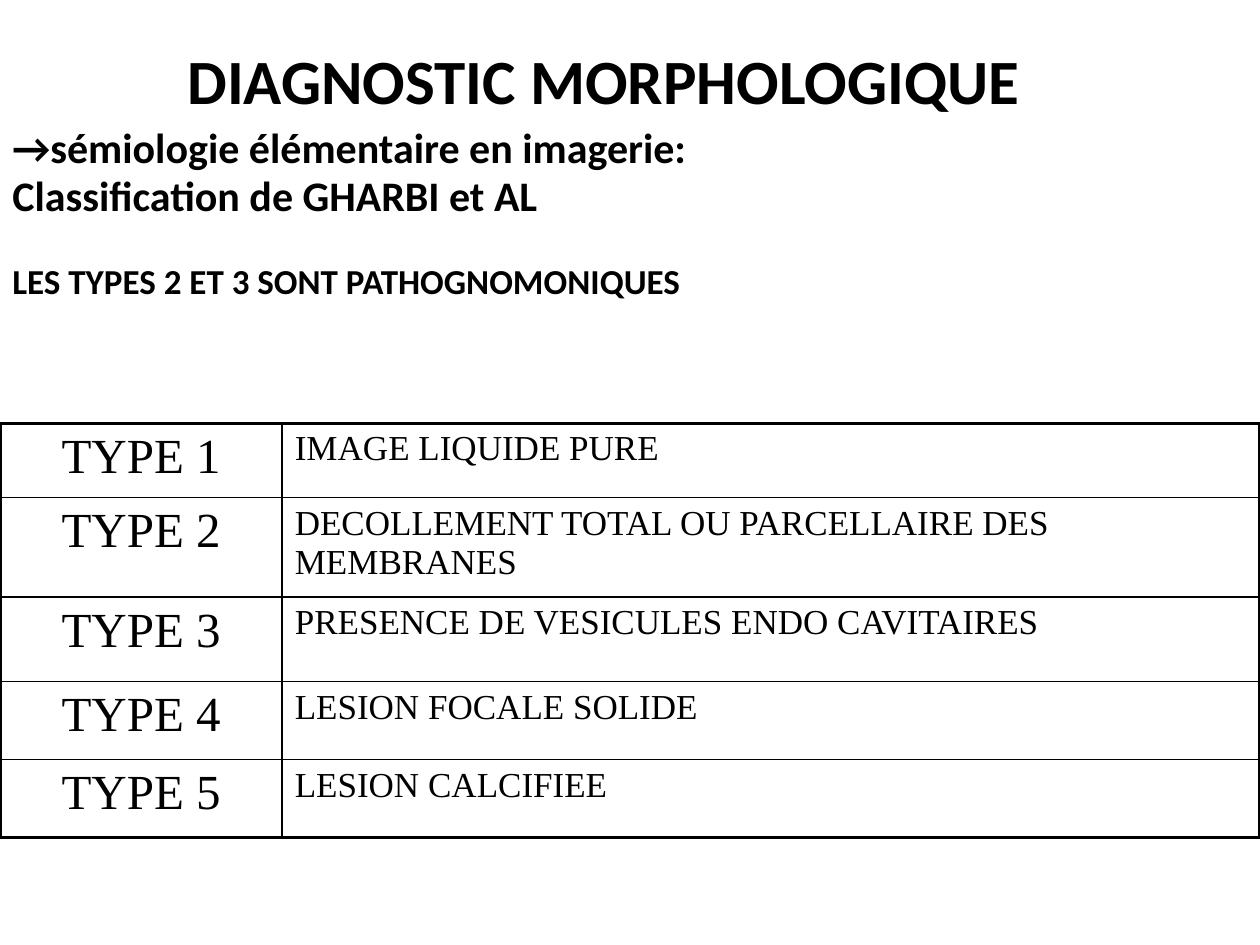
from dataclasses import dataclass

from lxml.etree import SubElement
from pptx import Presentation
from pptx.dml.color import RGBColor
from pptx.enum.text import PP_ALIGN
from pptx.oxml.ns import qn
from pptx.util import Inches, Pt

BLACK = RGBColor(0, 0, 0)
THICK, THIN = 2.25, 1


@dataclass
class Line:
    text: str
    size: int
    gap: float = 0


@dataclass
class Grade:
    name: str
    finding: str
    height: float


TITLE = Line("DIAGNOSTIC MORPHOLOGIQUE", 36)
INTRO = [
    Line("→sémiologie élémentaire en imagerie:", 24, 4.8),
    Line("Classification de GHARBI et AL", 24, 4.8),
    Line("LES TYPES 2 ET 3 SONT PATHOGNOMONIQUES", 20, 27.5),
]
GRADES = [
    Grade("TYPE 1", "IMAGE LIQUIDE PURE", 0.59),
    Grade("TYPE 2", "DECOLLEMENT TOTAL OU PARCELLAIRE DES MEMBRANES", 0.79),
    Grade("TYPE 3", "PRESENCE DE VESICULES ENDO CAVITAIRES", 0.67),
    Grade("TYPE 4", "LESION FOCALE SOLIDE", 0.62),
    Grade("TYPE 5", "LESION CALCIFIEE", 0.62),
]
WIDTHS = [2.24, 7.76]


def style(para, line: Line, face: str, bold: bool, align) -> None:
    para.text = line.text
    para.alignment = align
    para.space_before = Pt(line.gap)
    font = para.font
    font.name, font.size, font.bold = face, Pt(line.size), bold
    font.color.rgb = BLACK


def add_text(slide, box: tuple, lines: list[Line], align, spacing: float) -> None:
    frame = slide.shapes.add_textbox(*map(Inches, box)).text_frame
    frame.word_wrap = True
    for i, line in enumerate(lines):
        para = frame.add_paragraph() if i else frame.paragraphs[0]
        style(para, line, "Calibri", True, align)
        para.line_spacing = spacing


def set_edges(cell, edges: dict[str, float]) -> None:
    props = cell._tc.get_or_add_tcPr()
    for side, width in edges.items():
        edge = SubElement(props, qn(f"a:ln{side}"), w=str(Pt(width)))
        fill = SubElement(edge, qn("a:solidFill"))
        SubElement(fill, qn("a:srgbClr"), val=str(BLACK))


def add_grades(slide) -> None:
    total = sum(grade.height for grade in GRADES)
    box = map(Inches, (0, 3.36, sum(WIDTHS), total))
    table = slide.shapes.add_table(len(GRADES), len(WIDTHS), *box).table
    table.first_row = table.horz_banding = False
    for col, width in zip(table.columns, WIDTHS):
        col.width = Inches(width)
    last = len(GRADES) - 1
    for r, grade in enumerate(GRADES):
        table.rows[r].height = Inches(grade.height)
        cells = [
            (Line(grade.name, 28), PP_ALIGN.CENTER),
            (Line(grade.finding, 20), PP_ALIGN.LEFT),
        ]
        for c, (line, align) in enumerate(cells):
            cell = table.cell(r, c)
            style(cell.text_frame.paragraphs[0], line, "Times New Roman", False, align)
            set_edges(cell, {
                "L": THIN if c else THICK,
                "R": THICK if c else THIN,
                "T": THIN if r else THICK,
                "B": THICK if r == last else THIN,
            })
            cell.fill.background()


def main() -> None:
    deck = Presentation()
    deck.slide_width, deck.slide_height = Inches(10), Inches(7.5)
    slide = deck.slides.add_slide(deck.slide_layouts[6])
    add_text(slide, (0, 0.99, 10, 2.44), INTRO, PP_ALIGN.LEFT, 0.8)
    add_grades(slide)
    add_text(slide, (0.43, 0.28, 8.72, 0.71), [TITLE], PP_ALIGN.CENTER, 1.0)
    deck.save("out.pptx")


if __name__ == "__main__":
    main()
